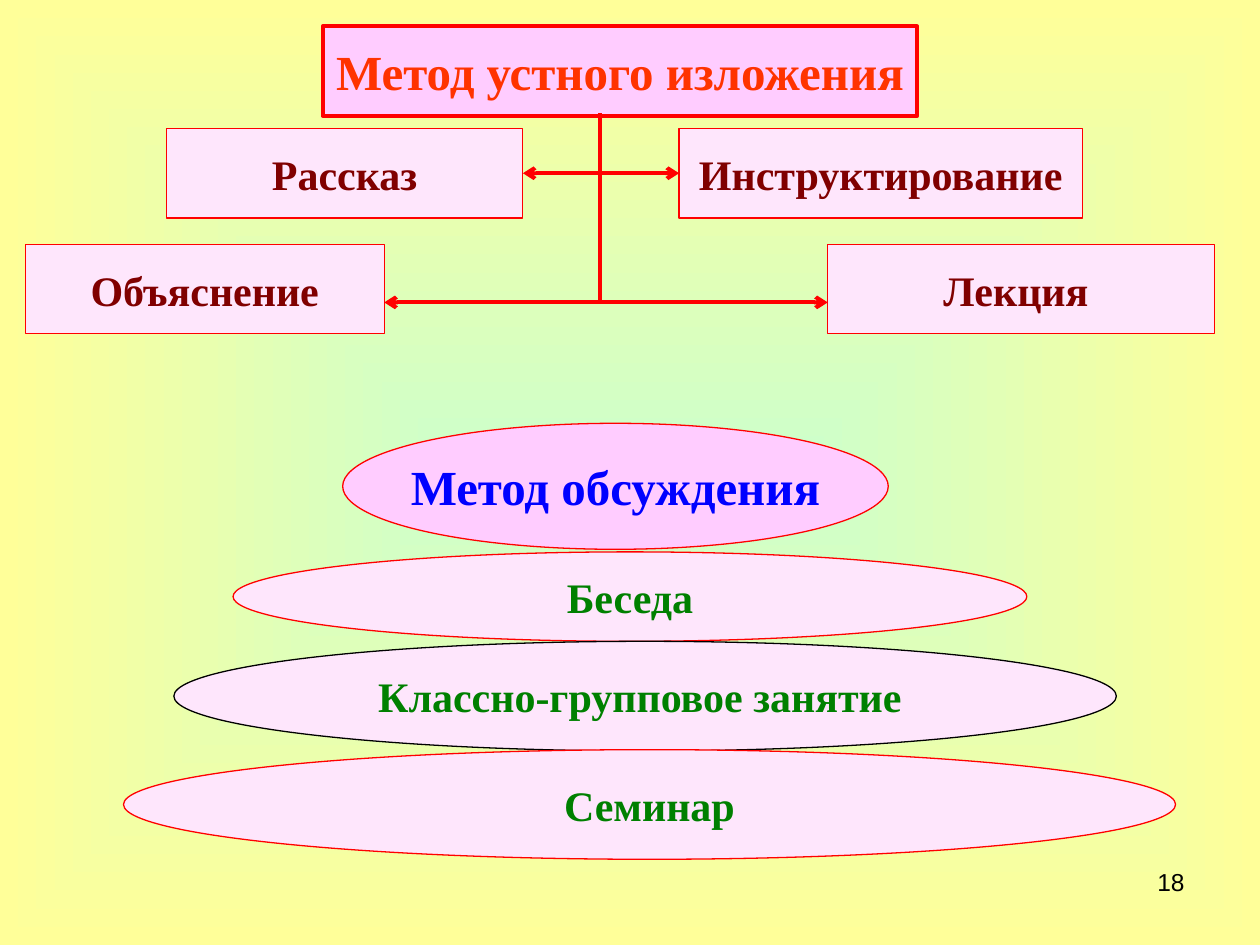
from lxml import etree
from pptx import Presentation
from pptx.dml.color import RGBColor
from pptx.enum.shapes import MSO_CONNECTOR, MSO_SHAPE
from pptx.enum.text import MSO_ANCHOR, PP_ALIGN
from pptx.oxml.ns import qn
from pptx.util import Inches, Pt

RECTANGLE, OVAL = MSO_SHAPE.RECTANGLE, MSO_SHAPE.OVAL
STRAIGHT = MSO_CONNECTOR.STRAIGHT
MIDDLE = MSO_ANCHOR.MIDDLE
CENTER, RIGHT = PP_ALIGN.CENTER, PP_ALIGN.RIGHT
LEFT_SIDE, RIGHT_SIDE = 1, 3

SERIF, SANS = "Times New Roman", "Arial"
RED, BLACK = "FF0000", "000000"
PINK, PALE_PINK = "FFCCFF", "FEE6FC"
ORANGE, MAROON, BLUE, GREEN = "FF3300", "800000", "0000FF", "008000"


def rgb(value):
    return RGBColor.from_string(value)


def write(frame, text, font_name, size, color, align, bold=False):
    frame.text = text
    paragraph = frame.paragraphs[0]
    paragraph.alignment = align
    font = paragraph.runs[0].font
    font.name, font.size, font.bold = font_name, Pt(size), bold
    font.color.rgb = rgb(color)


def add_label(slide, kind, box, text, size, color, fill, line=RED, weight=0.75):
    label = slide.shapes.add_shape(kind, *map(Inches, box))
    label.shadow.inherit = False
    label.fill.solid()
    label.fill.fore_color.rgb = rgb(fill)
    label.line.color.rgb = rgb(line)
    label.line.width = Pt(weight)
    label.text_frame.word_wrap = False
    label.text_frame.vertical_anchor = MIDDLE
    write(label.text_frame, text, SERIF, size, color, CENTER, bold=True)
    return label


def add_line(slide, start, end, arrow=True):
    line = slide.shapes.add_connector(STRAIGHT, *start, *end)
    line.line.color.rgb = rgb(RED)
    line.line.width = Pt(2.25)
    if arrow:
        outline = line.line._get_or_add_ln()
        etree.SubElement(outline, qn("a:tailEnd"), type="arrow")
    etree.SubElement(line.element.spPr, qn("a:effectLst"))
    return line


def paint_background(slide):
    fill = slide.background.fill
    fill.gradient()
    for stop, color in zip(fill.gradient_stops, ("CCFFCC", "FFFF99")):
        stop.color.rgb = rgb(color)
    gradient = slide.element.find(".//" + qn("a:gradFill"))
    gradient.remove(gradient.find(qn("a:lin")))
    shape_path = etree.Element(qn("a:path"), path="shape")
    etree.SubElement(shape_path, qn("a:fillToRect"),
                     l="50000", t="50000", r="50000", b="50000")
    gradient.find(qn("a:gsLst")).addnext(shape_path)


def add_presentation_methods(slide, left, top):
    height = 0.71
    add_label(slide, RECTANGLE, (left + 2.36, top, 4.72, height),
              "Метод устного изложения", 28, ORANGE, PINK, weight=2.25)

    def add_method(text, x, y, width):
        return add_label(slide, RECTANGLE, (left + x, top + y, width, height),
                         text, 24, MAROON, PALE_PINK)

    story = add_method("Рассказ", 1.12, 0.81, 2.83)
    explanation = add_method("Объяснение", 0, 1.73, 2.85)
    briefing = add_method("Инструктирование", 5.19, 0.81, 3.2)
    lecture = add_method("Лекция ", 6.37, 1.73, 3.07)

    trunk_x = Inches(left + 4.56)
    upper_y = story.top + story.height // 2
    lower_y = Inches(top + 2.19)
    add_line(slide, (trunk_x, Inches(top + 0.69)), (trunk_x, lower_y), arrow=False)
    for method, side in ((briefing, LEFT_SIDE), (story, RIGHT_SIDE)):
        branch = add_line(slide, (trunk_x, upper_y), (method.left, upper_y))
        branch.end_connect(method, side)
    for end_x in (lecture.left, explanation.left + explanation.width):
        add_line(slide, (trunk_x, lower_y), (end_x, lower_y))


def add_discussion_methods(slide, left, top):
    add_label(slide, OVAL, (left + 1.74, top, 4.33, 1),
              "Метод обсуждения", 28, BLUE, PINK)
    methods = (
        ("Беседа", 0.87, 1.02, 6.3, 0.71, RED),
        ("Классно-групповое занятие ", 0.4, 1.73, 7.48, 0.87, BLACK),
        ("Семинар", 0, 2.59, 8.35, 0.87, RED),
    )
    for text, x, y, width, height, line in methods:
        add_label(slide, OVAL, (left + x, top + y, width, height),
                  text, 24, GREEN, PALE_PINK, line)


def add_page_number(slide, box):
    page_number = slide.shapes.add_textbox(*map(Inches, box))
    page_number.text_frame.word_wrap = True
    write(page_number.text_frame, "18", SANS, 14, BLACK, RIGHT)


def main():
    deck = Presentation()
    deck.slide_width, deck.slide_height = Inches(10), Inches(7.5)
    slide = deck.slides.add_slide(deck.slide_layouts.get_by_name("Blank"))
    paint_background(slide)
    add_page_number(slide, (7.17, 6.83, 2.33, 0.52))
    add_presentation_methods(slide, 0.2, 0.21)
    add_discussion_methods(slide, 0.98, 3.36)
    deck.save("out.pptx")


if __name__ == "__main__":
    main()
